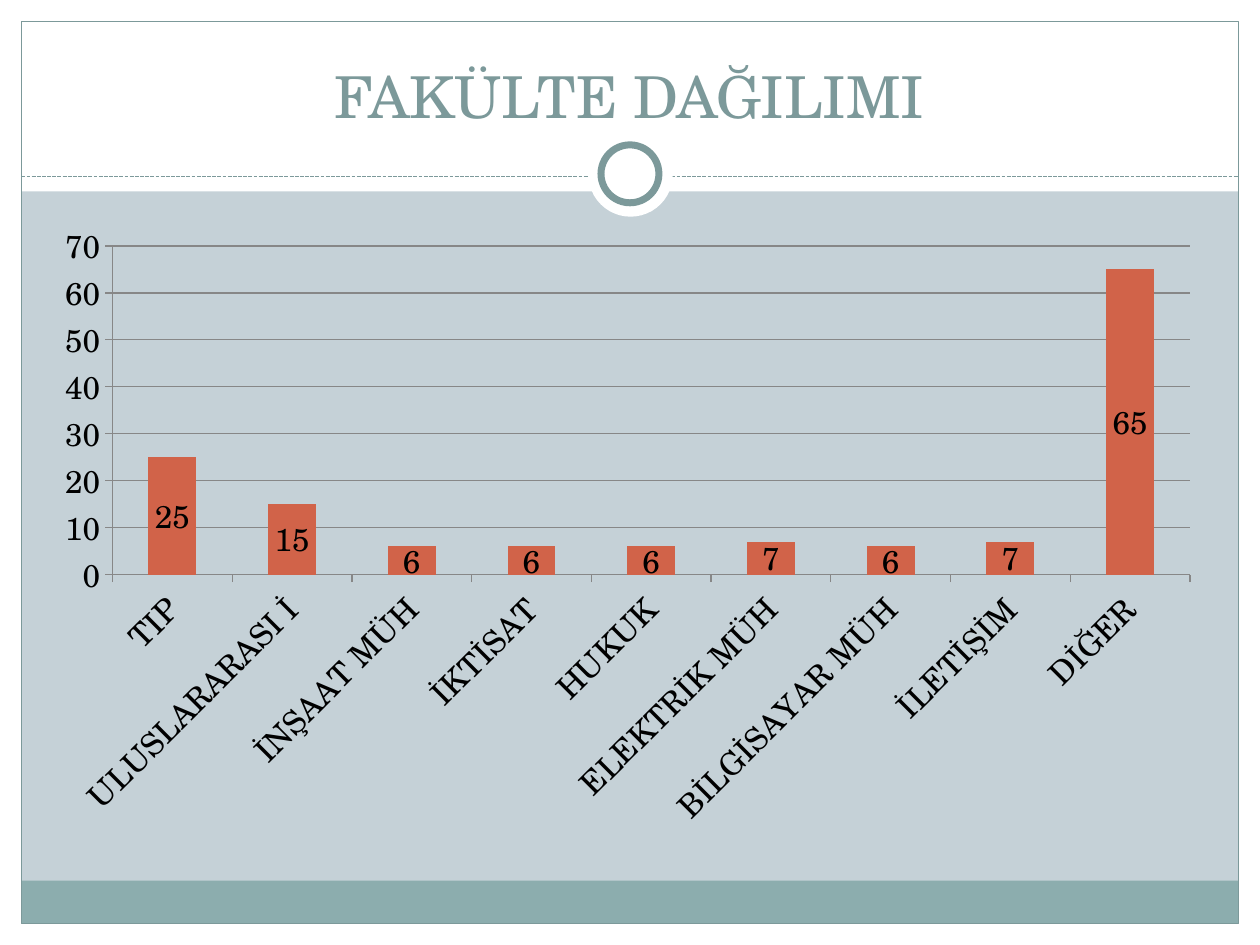
from lxml.etree import SubElement
from pptx import Presentation
from pptx.chart.data import CategoryChartData
from pptx.dml.color import RGBColor
from pptx.enum.chart import XL_CHART_TYPE, XL_LABEL_POSITION, XL_TICK_MARK
from pptx.enum.dml import MSO_LINE
from pptx.enum.shapes import MSO_CONNECTOR, MSO_SHAPE
from pptx.enum.text import MSO_ANCHOR, PP_ALIGN
from pptx.oxml.ns import qn
from pptx.util import Pt

PX = 9144
WIDE, HIGH = 1000, 750
WHITE, TEAL, BAND, PAPER = "FFFFFF", "7C999A", "8CADAE", "C5D1D7"
BAR, GRID, BLACK = "D16349", "878787", "000000"

FACULTIES = {
    "TIP": 25,
    "ULUSLARARASI İ": 15,
    "İNŞAAT MÜH": 6,
    "İKTİSAT": 6,
    "HUKUK": 6,
    "ELEKTRİK MÜH": 7,
    "BİLGİSAYAR MÜH": 6,
    "İLETİŞİM": 7,
    "DİĞER": 65,
}


def color(code):
    return RGBColor.from_string(code)


def apply(item, values):
    for name, value in values.items():
        setattr(item, name, value)


def scale(*sizes):
    return [size * PX for size in sizes]


class Deck:
    face = "TeX Gyre Schola"

    def __init__(self):
        self.show = Presentation()
        apply(self.show, {"slide_width": WIDE * PX, "slide_height": HIGH * PX})
        self.slide = self.show.slides.add_slide(self.show.slide_layouts[6])

    def back(self, code):
        fill = self.slide.background.fill
        fill.solid()
        fill.fore_color.rgb = color(code)

    def font(self, font, size, code):
        apply(font, {"name": self.face, "size": Pt(size), "bold": False})
        font.color.rgb = color(code)

    def stroke(self, line, code, width):
        line.color.rgb = color(code)
        line.width = Pt(width)

    def shape(self, kind, box, fill=None, line=None, width=0.75):
        shape = self.slide.shapes.add_shape(kind, *scale(*box))
        shape.shadow.inherit = False
        if fill:
            shape.fill.solid()
            shape.fill.fore_color.rgb = color(fill)
        else:
            shape.fill.background()
        if line:
            self.stroke(shape.line, line, width)
        else:
            shape.line.fill.background()

    def rule(self, start, end, code):
        rule = self.slide.shapes.add_connector(
            MSO_CONNECTOR.STRAIGHT, *scale(*start, *end))
        self.stroke(rule.line, code, 0.75)
        rule.line.dash_style = MSO_LINE.SQUARE_DOT
        SubElement(rule._element.spPr, qn("a:effectLst"))

    def title(self, words, box, size, code):
        frame = self.slide.shapes.add_textbox(*scale(*box)).text_frame
        apply(frame, {"word_wrap": True, "vertical_anchor": MSO_ANCHOR.BOTTOM})
        line = frame.paragraphs[0]
        line.alignment = PP_ALIGN.CENTER
        run = line.add_run()
        run.text = words
        self.font(run.font, size, code)

    def chart(self, counts, box):
        data = CategoryChartData()
        data.categories = list(counts)
        data.add_series("Series 1", list(counts.values()))
        chart = self.slide.shapes.add_chart(
            XL_CHART_TYPE.COLUMN_CLUSTERED, *scale(*box), data).chart
        apply(chart, {"has_legend": False, "has_title": False})
        self.font(chart.font, 18, BLACK)

        plot = chart.plots[0]
        apply(plot, {"gap_width": 150, "vary_by_categories": False,
                     "has_data_labels": True})
        apply(plot.data_labels, {"show_value": True,
                                 "position": XL_LABEL_POSITION.CENTER})
        self.font(plot.data_labels.font, 18, BLACK)
        fill = plot.series[0].format.fill
        fill.solid()
        fill.fore_color.rgb = color(BAR)

        for axis in (chart.category_axis, chart.value_axis):
            apply(axis, {"major_tick_mark": XL_TICK_MARK.OUTSIDE,
                         "minor_tick_mark": XL_TICK_MARK.NONE})
            self.stroke(axis.format.line, GRID, 0.75)
            self.font(axis.tick_labels.font, 18, BLACK)
        chart.category_axis._element.txPr.bodyPr.set("rot", "-2700000")
        apply(chart.value_axis, {"minimum_scale": 0, "maximum_scale": 70,
                                 "major_unit": 10, "has_major_gridlines": True})
        self.stroke(chart.value_axis.major_gridlines.format.line, GRID, 0.75)


def main():
    deck = Deck()
    deck.back(PAPER)
    edge = 17
    right, low = WIDE - edge, HIGH - edge
    for box in ((0, low, WIDE, edge), (0, 0, WIDE, 152),
                (0, 0, edge, HIGH), (right, 0, edge, HIGH)):
        deck.shape(MSO_SHAPE.RECTANGLE, box, WHITE)
    inner = right - edge
    deck.shape(MSO_SHAPE.RECTANGLE, (edge, 699, inner, 34), BAND)
    deck.shape(MSO_SHAPE.RECTANGLE, (edge, edge, inner, low - edge), line=TEAL)
    deck.rule((edge, 140), (right, 140), TEAL)
    deck.shape(MSO_SHAPE.OVAL, (467, 105, 67, 67), WHITE)
    deck.shape(MSO_SHAPE.OVAL, (477, 115, 46, 46), WHITE, TEAL, 4)
    deck.title("FAKÜLTE DAĞILIMI", (33, 25, 933, 83), 33, TEAL)
    deck.chart(FACULTIES, (33, 167, 930, 500))
    deck.show.save("out.pptx")


if __name__ == "__main__":
    main()
